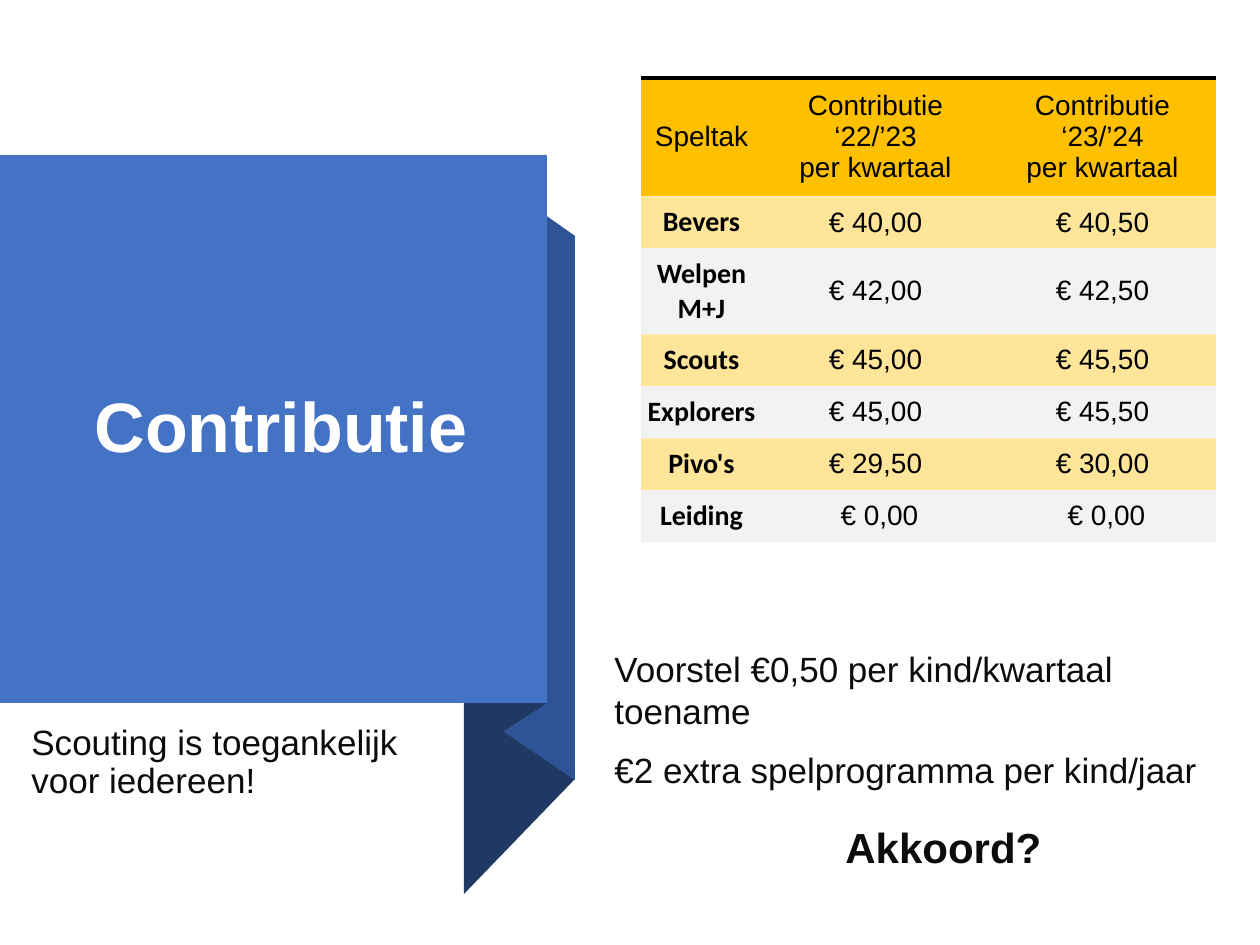
from lxml import etree
from pptx import Presentation
from pptx import util as u
from pptx.dml.color import RGBColor
from pptx.enum import shapes, text
from pptx.oxml import ns

PX = u.Inches(1) / 126


def px(*nums):
    return [u.Emu(round(n * PX)) for n in nums]


def style(para, size, color, bold=False, face="Arial"):
    for run in para.runs:
        run.font.size = u.Pt(size)
        run.font.name = face
        run.font.bold = bold
        run.font.color.rgb = RGBColor.from_string(color)


deck = Presentation()
deck.slide_width, deck.slide_height = px(1260, 945)
slide = deck.slides.add_slide(deck.slide_layouts[5])

folds = [
    ("1F3864", [(575, 779), (464, 894), (464, 358), (575, 242)]),
    ("2F5496", [(575, 780), (504, 732), (504, 186), (575, 236)]),
    ("1F3864", [(547, 703), (504, 731), (504, 184), (547, 156)]),
]
parts = []
for color, pts in folds:
    path = slide.shapes.build_freeform(*pts[0], scale=PX)
    path.add_line_segments(pts[1:], close=True)
    parts.append((path.convert_to_shape(), color))
panel = slide.shapes.add_shape(shapes.MSO_SHAPE.RECTANGLE, *px(0, 155, 547, 548))
parts.append((panel, "4472C4"))
for part, color in parts:
    part.shadow.inherit = False
    part.fill.solid()
    part.fill.fore_color.rgb = RGBColor.from_string(color)
    part.line.fill.background()

title = slide.shapes.title
panel._element.addnext(title._element)
title.left, title.top, title.width, title.height = px(82, 186, 447, 488)
frame = title.text_frame
frame.text = "Contributie"
frame.word_wrap = True
frame.auto_size = text.MSO_AUTO_SIZE.NONE
frame.vertical_anchor = text.MSO_ANCHOR.MIDDLE
frame.paragraphs[0].alignment = text.PP_ALIGN.LEFT
frame.paragraphs[0].line_spacing = 0.9
style(frame.paragraphs[0], 40, "FFFFFF", True)

notes = [
    ((19, 719, 444, 175), "Scouting is toegankelijk voor iedereen!", 20, False, 0.9),
    ((602, 641, 630, 158),
     "Voorstel €0,50 per kind/kwartaal toename\n€2 extra spelprogramma per kind/jaar",
     20, False, 1.0),
    ((833, 815, 262, 63), "Akkoord?", 24, True, 1.0),
]
for area, words, size, bold, gap in notes:
    frame = slide.shapes.add_textbox(*px(*area)).text_frame
    frame.word_wrap = True
    frame.text = words
    for i, para in enumerate(frame.paragraphs):
        para.line_spacing = gap
        if i:
            para.space_before = u.Pt(10)
        style(para, size, "0C0C0C", bold)

rows = [
    ("Speltak", "Contributie ‘22/’23\vper kwartaal", "Contributie ‘23/’24\vper kwartaal"),
    ("Bevers", "€ 40,00", "€ 40,50"),
    ("Welpen M+J", "€ 42,00", "€ 42,50"),
    ("Scouts", "€ 45,00", "€ 45,50"),
    ("Explorers", "€ 45,00", "€ 45,50"),
    ("Pivo's", "€ 29,50", "€ 30,00"),
    ("Leiding", " € 0,00", " € 0,00"),
]
table = slide.shapes.add_table(len(rows), 3, *px(641, 78, 575, 458)).table
table.first_row = table.horz_banding = False
table._tbl.tblPr.find(ns.qn("a:tableStyleId")).text = "{2D5ABB26-0587-4C30-8999-92F81FD0307C}"
for col, wide in zip(table.columns, px(121, 227, 227)):
    col.width = wide
for row, tall in zip(table.rows, px(112, 52, 86, 52, 52, 52, 52)):
    row.height = tall

for r, row in enumerate(rows):
    for c, words in enumerate(row):
        cell = table.cell(r, c)
        cell.text = words
        cell.vertical_anchor = text.MSO_ANCHOR.MIDDLE
        cell.margin_left = cell.margin_right = u.Inches(0.01)
        cell.margin_top = cell.margin_bottom = u.Inches(0.07)
        para = cell.text_frame.paragraphs[0]
        para.alignment = text.PP_ALIGN.CENTER
        label = r > 0 and c == 0
        style(para, 16, "000000", label, "Calibri" if label else "Arial")
        props = cell._tc.get_or_add_tcPr()
        if r == 0:
            edge = etree.SubElement(props, ns.qn("a:lnT"), w=str(u.Pt(2.25)))
            ink = etree.SubElement(edge, ns.qn("a:solidFill"))
            etree.SubElement(ink, ns.qn("a:srgbClr"), val="000000")
        cell.fill.solid()
        band = r % 2 == 1
        cell.fill.fore_color.rgb = RGBColor.from_string("FFC000" if band or r == 0 else "F2F2F2")
        if band:
            tint = props.find(ns.qn("a:solidFill"))[0]
            etree.SubElement(tint, ns.qn("a:alpha"), val="40000")

deck.save("out.pptx")
